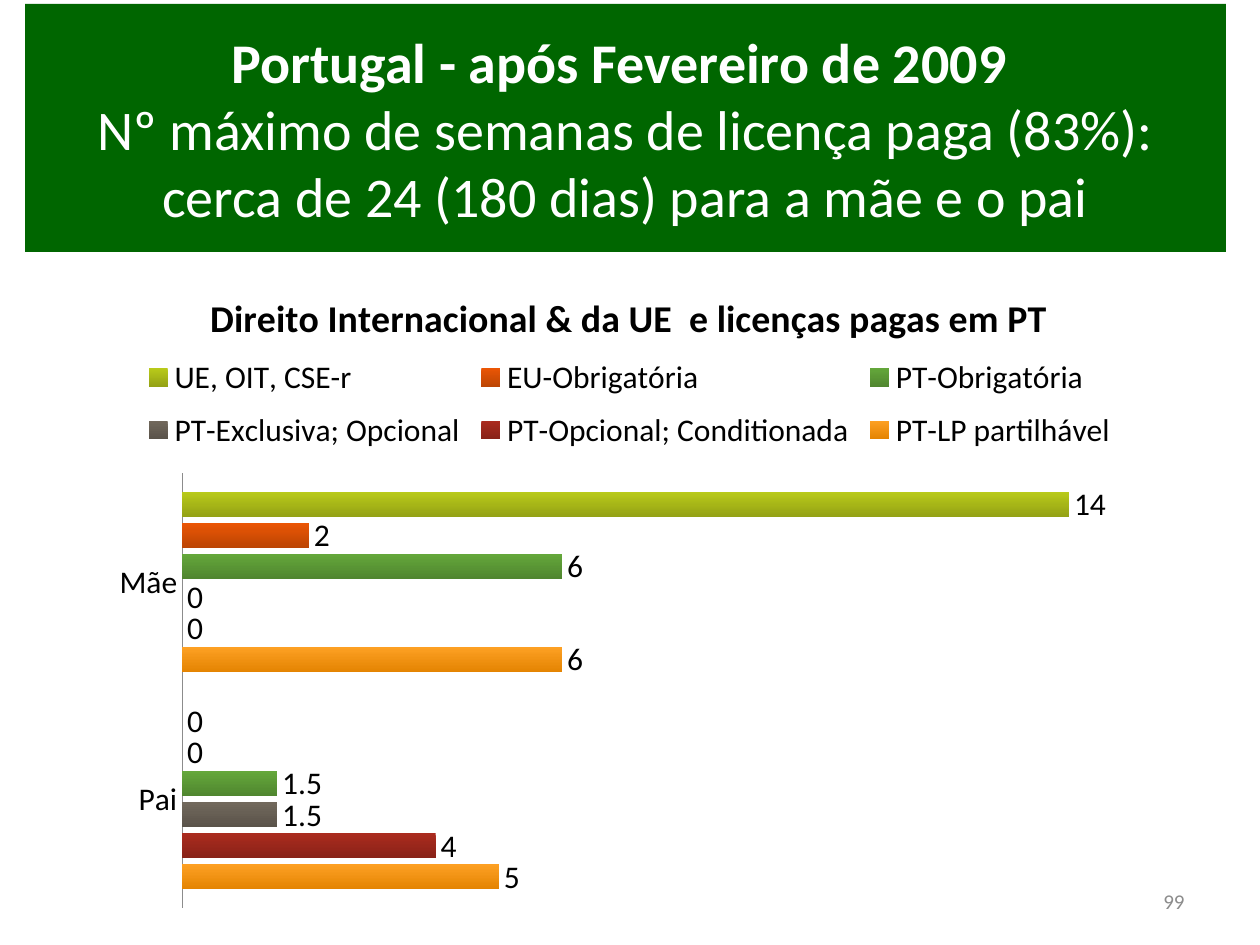
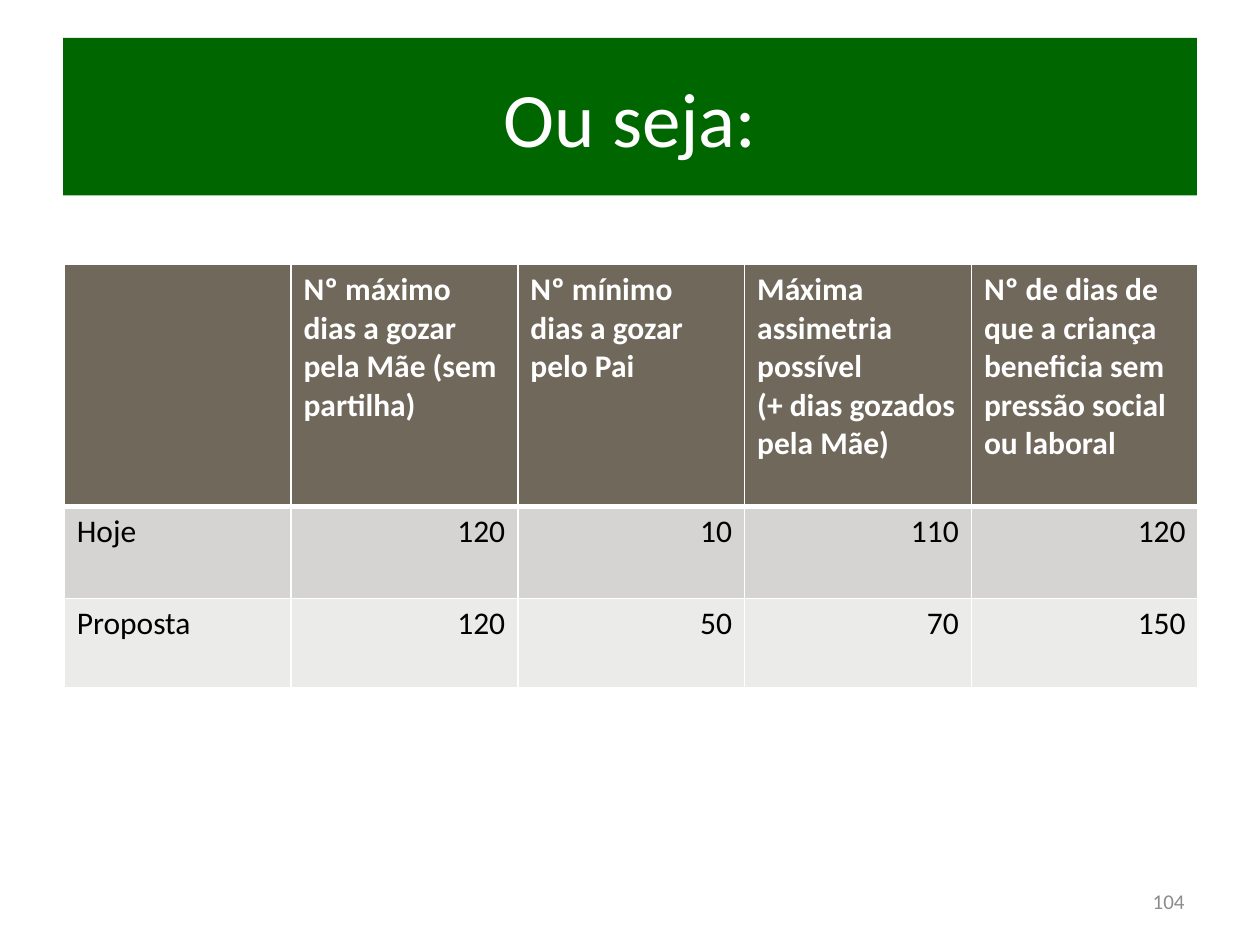
from lxml.etree import SubElement
from pptx import Presentation
from pptx.chart.data import CategoryChartData
from pptx.dml.color import RGBColor
from pptx.enum.chart import XL_CHART_TYPE, XL_LABEL_POSITION, XL_LEGEND_POSITION, XL_TICK_MARK
from pptx.enum.text import MSO_ANCHOR, MSO_AUTO_SIZE, PP_ALIGN
from pptx.oxml.ns import qn
from pptx.util import Inches, Pt

FONT = "Calibri"
WHITE = RGBColor(0xFF, 0xFF, 0xFF)
BLACK = RGBColor(0x00, 0x00, 0x00)
GREEN = RGBColor(0x00, 0x66, 0x00)
GREY = RGBColor(0x8C, 0x8C, 0x8C)
BROWN = RGBColor(0x71, 0x68, 0x5C)
ROW_DARK = RGBColor(0xD5, 0xD4, 0xD2)
ROW_LIGHT = RGBColor(0xEB, 0xEB, 0xEA)

# Text of each title run, with its bold setting
LEAVE_TITLE = [
    ("Portugal - após Fevereiro de 2009 \v", True),
    ("Nº máximo de semanas de licença paga (83%): "
     "cerca de 24 (180 dias) para a mãe e o pai", False),
]
SUMMARY_TITLE = [("Ou seja:", False)]

CHART_TITLE = "Direito Internacional & da UE  e licenças pagas em PT"
PARENTS = ["Pai", "Mãe"]
LEAVE_WEEKS = [
    ("PT-LP partilhável", (5, 6), RGBColor(0xFD, 0xA0, 0x23)),
    ("PT-Opcional; Conditionada", (4, 0), RGBColor(0xAA, 0x2B, 0x1E)),
    ("PT-Exclusiva; Opcional", (1.5, 0), BROWN),
    ("PT-Obrigatória", (1.5, 6), RGBColor(0x64, 0xA7, 0x3B)),
    ("EU-Obrigatória", (0, 2), RGBColor(0xEB, 0x56, 0x05)),
    ("UE, OIT, CSE-r", (0, 14), RGBColor(0xB9, 0xCA, 0x1A)),
]
PLOT_LAYOUT = {"x": 0.118, "y": 0.315, "w": 0.866, "h": 0.656}
LEGEND_LAYOUT = {"x": 0.08, "y": 0.12, "w": 0.84, "h": 0.18}

DAYS_TABLE = [
    ["", "Nº máximo dias a gozar pela Mãe (sem partilha)",
     "Nº mínimo dias a gozar pelo Pai",
     "Máxima assimetria possível\n(+ dias gozados pela Mãe)",
     "Nº de dias de que a criança beneficia sem pressão social ou laboral"],
    ["Hoje", "120", "10", "110", "120"],
    ["Proposta", "120", "50", "70", "150"],
]
ROW_HEIGHTS = [1.92, 0.73, 0.71]
ROW_FILLS = [BROWN, ROW_DARK, ROW_LIGHT]
COLUMN_WIDTH = 1.8


def format_font(font, size, color, bold=False):
    values = {"name": FONT, "size": Pt(size), "bold": bold}
    for name, value in values.items():
        setattr(font, name, value)
    font.color.rgb = color


def add_titled_slide(presentation, title_runs, box, size, number):
    """Add a slide with a green title band and a page number."""
    slide = presentation.slides.add_slide(presentation.slide_layouts[5])
    title = slide.shapes.title
    title.left, title.top, title.width, title.height = map(Inches, box)
    title.fill.solid()
    title.fill.fore_color.rgb = GREEN
    frame = title.text_frame
    frame.auto_size = MSO_AUTO_SIZE.NONE
    frame.vertical_anchor = MSO_ANCHOR.MIDDLE
    paragraph = frame.paragraphs[0]
    paragraph.alignment = PP_ALIGN.CENTER
    for text, bold in title_runs:
        run = paragraph.add_run()
        run.text = text.rstrip("\v")
        format_font(run.font, size, WHITE, bold)
        if text.endswith("\v"):
            paragraph.add_line_break()

    number_box = slide.shapes.add_textbox(
        Inches(7.17), Inches(6.95), Inches(2.33), Inches(0.4))
    frame = number_box.text_frame
    frame.word_wrap = True
    frame.vertical_anchor = MSO_ANCHOR.MIDDLE
    paragraph = frame.paragraphs[0]
    paragraph.text = str(number)
    paragraph.alignment = PP_ALIGN.RIGHT
    format_font(paragraph.runs[0].font, 12, GREY)
    return slide


def set_layout(element, layout, successors, inner=False):
    """Place a chart part by fractions of the chart area."""
    for old in element.findall(qn("c:layout")):
        element.remove(old)
    holder = SubElement(element, qn("c:layout"))
    manual = SubElement(holder, qn("c:manualLayout"))
    if inner:
        SubElement(manual, qn("c:layoutTarget")).set("val", "inner")
    for key in "xy":
        SubElement(manual, qn(f"c:{key}Mode")).set("val", "edge")
    for key, value in layout.items():
        SubElement(manual, qn(f"c:{key}")).set("val", str(value))
    following = next(child for child in element if child.tag in map(qn, successors))
    following.addprevious(holder)


def add_leave_chart(slide):
    data = CategoryChartData()
    data.categories = PARENTS
    for name, weeks, _ in LEAVE_WEEKS:
        data.add_series(name, weeks)
    chart = slide.shapes.add_chart(
        XL_CHART_TYPE.BAR_CLUSTERED, Inches(0.35), Inches(2.1),
        Inches(9.29), Inches(5.26), data).chart
    format_font(chart.font, 18, BLACK)

    chart.has_title = True
    title_paragraph = chart.chart_title.text_frame.paragraphs[0]
    title_paragraph.text = CHART_TITLE
    format_font(title_paragraph.runs[0].font, 21.6, BLACK, True)

    chart.has_legend = True
    legend = chart.legend
    legend.position = XL_LEGEND_POSITION.TOP
    legend.include_in_layout = False
    format_font(legend.font, 18, BLACK)

    axis = chart.category_axis
    axis.major_tick_mark = XL_TICK_MARK.NONE
    axis.format.line.color.rgb = GREY
    axis.format.line.width = Pt(0.75)
    value_axis = chart.value_axis
    value_axis.minimum_scale, value_axis.maximum_scale = 0, 16
    value_axis.has_major_gridlines = False
    value_axis.visible = False

    plot = chart.plots[0]
    plot.gap_width, plot.overlap, plot.vary_by_categories = 150, -25, False
    for series, (_, _, color) in zip(plot.series, LEAVE_WEEKS):
        fill = series.format.fill
        fill.gradient()
        fill.gradient_angle = 270
        for stop, brightness in zip(fill.gradient_stops, (0, -0.2)):
            stop.color.rgb = color
            stop.color.brightness = brightness
        labels = series.data_labels
        labels.show_value = True
        labels.position = XL_LABEL_POSITION.OUTSIDE_END
        format_font(labels.font, 18, BLACK)

    plot_area = chart.element.find(".//" + qn("c:plotArea"))
    set_layout(plot_area, PLOT_LAYOUT, ["c:barChart"], inner=True)
    legend_element = chart.element.find(".//" + qn("c:legend"))
    set_layout(legend_element, LEGEND_LAYOUT, ["c:overlay", "c:txPr"])


def set_borders(cell, widths):
    """Draw white cell borders; widths maps a side (L, R, T, B) to points."""
    properties = cell._tc.get_or_add_tcPr()
    for position, (side, width) in enumerate(widths.items()):
        line = SubElement(properties, qn(f"a:ln{side}"), w=str(Pt(width)))
        fill = SubElement(line, qn("a:solidFill"))
        SubElement(fill, qn("a:srgbClr"), val=str(WHITE))
        properties.insert(position, line)


def add_days_table(slide):
    row_count, column_count = len(DAYS_TABLE), len(DAYS_TABLE[0])
    table = slide.shapes.add_table(
        row_count, column_count, Inches(0.51), Inches(2.1),
        Inches(COLUMN_WIDTH * column_count), Inches(sum(ROW_HEIGHTS))).table
    for column in table.columns:
        column.width = Inches(COLUMN_WIDTH)
    for row_index, texts in enumerate(DAYS_TABLE):
        table.rows[row_index].height = Inches(ROW_HEIGHTS[row_index])
        header = row_index == 0
        for column_index, text in enumerate(texts):
            cell = table.cell(row_index, column_index)
            cell.text = text
            cell.fill.solid()
            cell.fill.fore_color.rgb = ROW_FILLS[row_index]
            set_borders(cell, {"L": 1, "R": 1, "T": 3 if row_index == 1 else 1,
                               "B": 3 if header else 1})
            for paragraph in cell.text_frame.paragraphs:
                if not header and column_index:
                    paragraph.alignment = PP_ALIGN.RIGHT
                for run in paragraph.runs:
                    format_font(run.font, 18, WHITE if header else BLACK, header)


def main():
    presentation = Presentation()
    presentation.slide_width, presentation.slide_height = Inches(10), Inches(7.5)
    leave_slide = add_titled_slide(
        presentation, LEAVE_TITLE, (0.2, 0.03, 9.53, 1.97), 32, 99)
    add_leave_chart(leave_slide)
    summary_slide = add_titled_slide(
        presentation, SUMMARY_TITLE, (0.5, 0.3, 9, 1.25), 44, 104)
    add_days_table(summary_slide)
    presentation.save("out.pptx")


if __name__ == "__main__":
    main()
